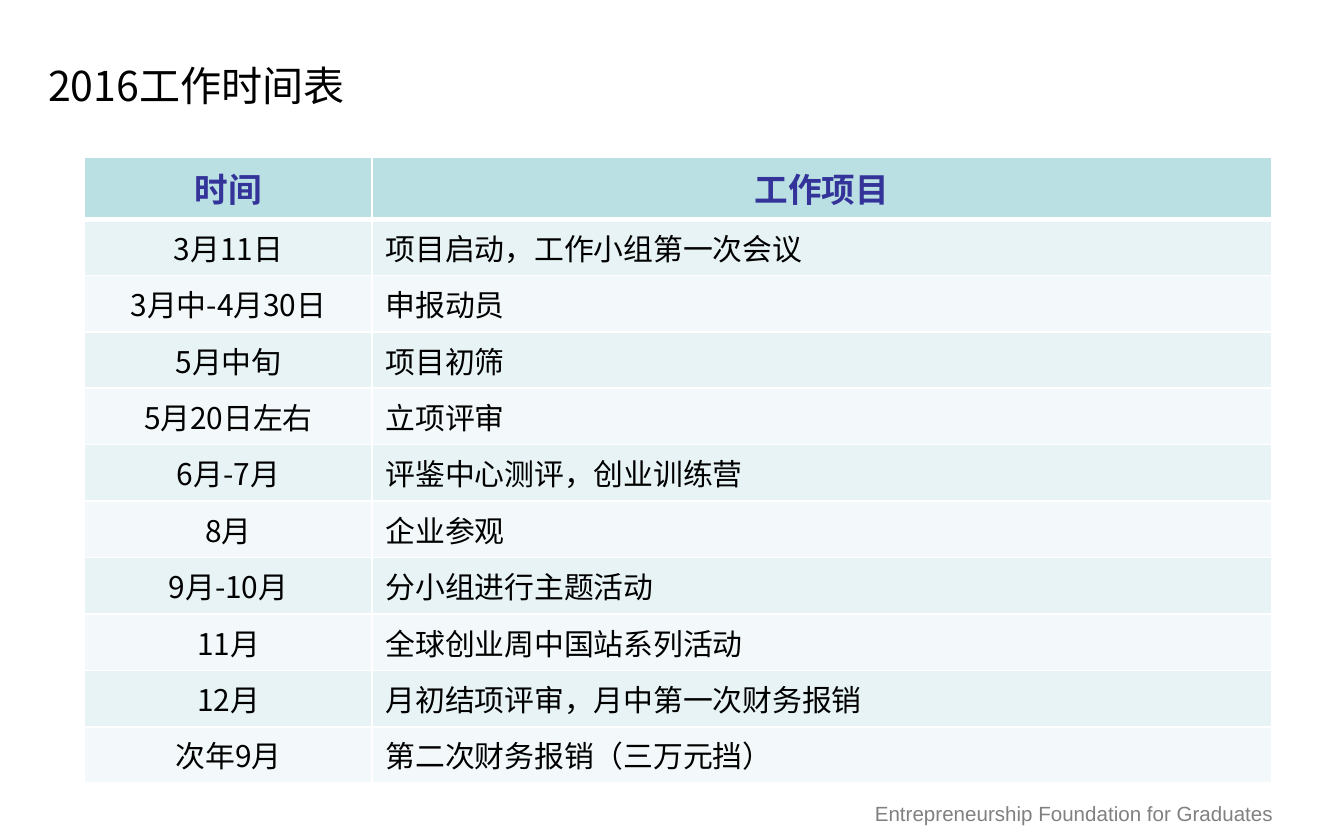
from lxml import etree
from pptx import Presentation
from pptx.dml.color import RGBColor
from pptx.enum import text
from pptx.oxml.ns import qn
from pptx.util import Inches, Pt

CJK = "Noto Sans CJK SC"
TITLE = "2016工作时间表"
FOOTER = "Entrepreneurship Foundation for Graduates"
HEADINGS = ("时间", "工作项目")
SCHEDULE = [
    ("3月11日", "项目启动，工作小组第一次会议"),
    ("3月中-4月30日", "申报动员"),
    ("5月中旬", "项目初筛"),
    ("5月20日左右", "立项评审"),
    ("6月-7月", "评鉴中心测评，创业训练营"),
    ("8月", "企业参观"),
    ("9月-10月", "分小组进行主题活动"),
    ("11月", "全球创业周中国站系列活动"),
    ("12月", "月初结项评审，月中第一次财务报销"),
    ("次年9月", "第二次财务报销（三万元挡）"),
]
COLUMN_WIDTHS = (2.14, 6.69)
HEADER_HEIGHT, ROW_HEIGHT = 0.46, 0.42
HEADER_FILL, BAND_FILLS = "BBE0E3", ("E7F3F4", "F3F9FA")


def color(value):
    return RGBColor.from_string(value)


def add_run(paragraph, words, size, ink, face=CJK, bold=False):
    run = paragraph.add_run()
    run.text = words
    font = run.font
    font.size, font.name, font.bold = Pt(size), face, bold
    font.color.rgb = color(ink)
    latin = run._r.rPr.find(qn("a:latin"))
    east_asian = etree.Element(qn("a:ea"), typeface=face)
    latin.addnext(east_asian)


def add_label(slide, box, words, size, ink, face, margins, wrap):
    frame = slide.shapes.add_textbox(*map(Inches, box)).text_frame
    frame.word_wrap = wrap
    frame.vertical_anchor = text.MSO_ANCHOR.MIDDLE
    frame.margin_left = frame.margin_right = Inches(margins[0])
    frame.margin_top = frame.margin_bottom = Inches(margins[1])
    add_run(frame.paragraphs[0], words, size, ink, face)


def set_borders(cell, top, bottom):
    """Draw white cell borders, with top and bottom widths in points."""
    properties = cell._tc.get_or_add_tcPr()
    for side, width in (("L", 1), ("R", 1), ("T", top), ("B", bottom)):
        line = etree.SubElement(properties, qn(f"a:ln{side}"), w=str(Pt(width)))
        fill = etree.SubElement(line, qn("a:solidFill"))
        etree.SubElement(fill, qn("a:srgbClr"), val="FFFFFF")


def add_schedule(slide):
    rows = [HEADINGS] + SCHEDULE
    table = slide.shapes.add_table(
        len(rows), len(HEADINGS), Inches(0.63), Inches(1.17),
        Inches(sum(COLUMN_WIDTHS)),
        Inches(HEADER_HEIGHT + ROW_HEIGHT * len(SCHEDULE))).table
    for column, width in zip(table.columns, COLUMN_WIDTHS):
        column.width = Inches(width)
    for r, entries in enumerate(rows):
        header = r == 0
        table.rows[r].height = Inches(HEADER_HEIGHT if header else ROW_HEIGHT)
        for c, words in enumerate(entries):
            cell = table.cell(r, c)
            set_borders(cell, top=3 if r == 1 else 1, bottom=3 if header else 1)
            cell.fill.solid()
            cell.fill.fore_color.rgb = color(
                HEADER_FILL if header else BAND_FILLS[(r - 1) % 2])
            paragraph = cell.text_frame.paragraphs[0]
            if header or c == 0:
                paragraph.alignment = text.PP_ALIGN.CENTER
            add_run(paragraph, words, 18 if header else 16,
                    "333399" if header else "000000", bold=header)


def main():
    deck = Presentation()
    deck.slide_width, deck.slide_height = Inches(10), Inches(6.25)
    slide = deck.slides.add_slide(deck.slide_layouts[6])
    add_label(slide, (6.43, 5.92, 3.2, 0.27), FOOTER, 11, "808080", "Arial",
              (0.08, 0.04), wrap=False)
    add_label(slide, (0.26, 0.45, 5.43, 0.37), TITLE, 22, "000000", CJK,
              (0.1, 0.05), wrap=True)
    add_schedule(slide)
    deck.save("out.pptx")


if __name__ == "__main__":
    main()
